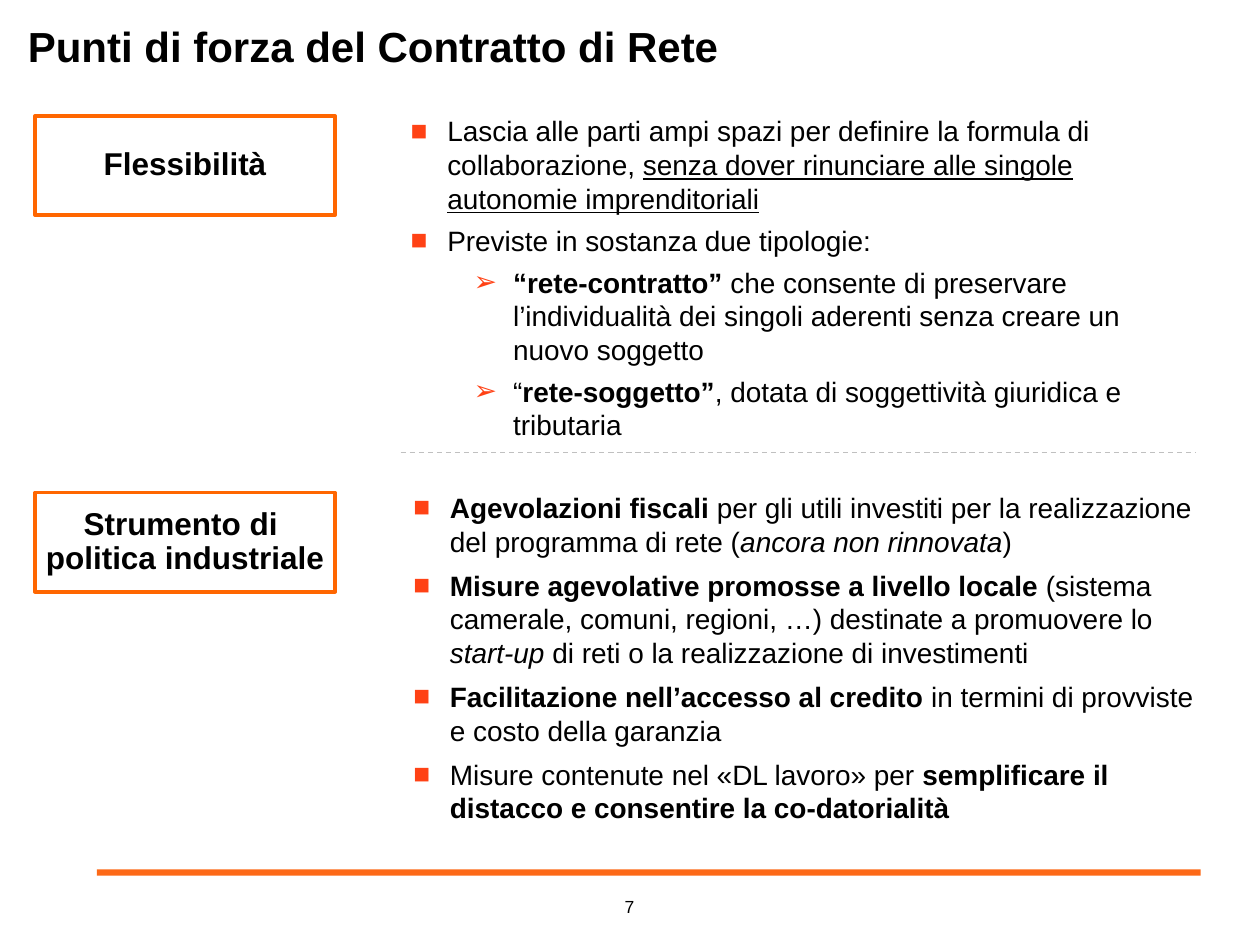
from lxml import etree
from pptx import Presentation
from pptx import util as u
from pptx.dml.color import RGBColor
from pptx.enum import dml, shapes, text
from pptx.oxml import ns

Pt = u.Pt
FONT = "Arial"
COLORS = {
    "text": "000000", "box": "FFFFFF", "frame": "FF6600",
    "bullet": "FF4215", "divider": "C0C0C0", "footer": "FD6917",
}
TITLE = "Punti di forza del Contratto di Rete"
PAGE = "7"

# Each point is (level, runs); each run is (wording, style)
FLEXIBILITY = [
    (0, [("Lascia alle parti ampi spazi per definire la formula di collaborazione, ", ""),
         ("senza dover rinunciare alle singole autonomie imprenditoriali", "underline")]),
    (0, [("Previste in sostanza due tipologie:", "")]),
    (1, [("“rete-contratto”", "bold"),
         (" che consente di preservare l’individualità dei singoli aderenti "
          "senza creare un nuovo soggetto", "")]),
    (1, [("“", ""), ("rete-soggetto”", "bold"),
         (", dotata di soggettività giuridica e tributaria", "")]),
]
POLICY = [
    (0, [("Agevolazioni fiscali", "bold"),
         (" per gli utili investiti per la realizzazione del programma di rete (", ""),
         ("ancora non rinnovata", "italic"), (")", "")]),
    (0, [("Misure agevolative promosse a livello locale", "bold"),
         (" (sistema camerale, comuni, regioni, …) destinate a promuovere lo ", ""),
         ("start-up", "italic"),
         (" di reti o la realizzazione di investimenti", "")]),
    (0, [("Facilitazione nell’accesso al credito", "bold"),
         (" in termini di provviste e costo della garanzia", "")]),
    (0, [("Misure contenute nel «DL lavoro» per ", ""),
         ("semplificare il distacco e consentire la co-datorialità", "bold")]),
]
# Heading lines, heading top, points, (left, top, width, height), gap, anchor
SECTIONS = [
    (["Flessibilità"], 66.25, FLEXIBILITY, (227.5, 62.6, 455.8, 192.2), 4.8,
     text.MSO_ANCHOR.MIDDLE),
    (["Strumento di ", "politica industriale"], 281.5, POLICY,
     (229, 280.3, 454.3, 212), 6, text.MSO_ANCHOR.TOP),
]
# Bullet, left margin and hanging indent of each level
LEVELS = [("■", 20.9, 20.9), ("➢", 58.5, 22.5)]


def rgb(part):
    return RGBColor.from_string(COLORS[part])


def place(shape, left, top, width, height):
    shape.left, shape.top = Pt(left), Pt(top)
    shape.width, shape.height = Pt(width), Pt(height)


def set_frame(frame, anchor, left=0, right=0, wrap=True):
    frame.auto_size = text.MSO_AUTO_SIZE.NONE
    frame.word_wrap = wrap
    frame.vertical_anchor = anchor
    frame.margin_left, frame.margin_right = Pt(left), Pt(right)
    frame.margin_top = frame.margin_bottom = 0


def set_font(paragraph, size, bold=False):
    font = paragraph.font
    font.name, font.size, font.bold = FONT, Pt(size), bold
    font.color.rgb = rgb("text")


def add_bullet(paragraph, level):
    char, margin, hanging = LEVELS[level]
    props = paragraph._p.get_or_add_pPr()
    props.set("marL", str(Pt(margin)))
    props.set("indent", str(-Pt(hanging)))
    color = etree.SubElement(props, ns.qn("a:buClr"))
    etree.SubElement(color, ns.qn("a:srgbClr"), val=COLORS["bullet"])
    etree.SubElement(props, ns.qn("a:buFont"), typeface=FONT)
    etree.SubElement(props, ns.qn("a:buChar"), char=char)


def fill_points(body, points, gap):
    for index, (level, runs) in enumerate(points):
        paragraph = body.paragraphs[0] if index == 0 else body.add_paragraph()
        paragraph.level = level
        add_bullet(paragraph, level)
        set_font(paragraph, 16)
        paragraph.space_before = Pt(gap if index else 0)
        for wording, style in runs:
            run = paragraph.add_run()
            run.text = wording
            if style:
                setattr(run.font, style, True)


def add_rectangle(slide, left, top, width, height, fill):
    rectangle = slide.shapes.add_shape(
        shapes.MSO_SHAPE.RECTANGLE, Pt(left), Pt(top), Pt(width), Pt(height))
    rectangle.shadow.inherit = False
    rectangle.fill.solid()
    rectangle.fill.fore_color.rgb = rgb(fill)
    rectangle.line.fill.background()
    return rectangle


def add_heading(slide, lines, top):
    heading = add_rectangle(slide, 20, top, 171.5, 56.75, "box")
    heading.line.color.rgb = rgb("frame")
    heading.line.width = Pt(2)
    frame = heading.text_frame
    set_frame(frame, text.MSO_ANCHOR.MIDDLE, 7.2, 7.2, wrap=False)
    frame.text = "\n".join(lines)
    for paragraph in frame.paragraphs:
        paragraph.alignment = text.PP_ALIGN.CENTER
        paragraph.line_spacing = 0.9
        set_font(paragraph, 18, bold=True)


def add_divider(slide, left, right, y):
    divider = slide.shapes.add_connector(
        shapes.MSO_CONNECTOR.STRAIGHT, Pt(left), Pt(y), Pt(right), Pt(y))
    divider.line.color.rgb = rgb("divider")
    divider.line.width = Pt(0.75)
    divider.line.dash_style = dml.MSO_LINE.DASH
    etree.SubElement(divider._element.spPr, ns.qn("a:effectLst"))


def main():
    deck = Presentation()
    deck.slide_width, deck.slide_height = Pt(720), Pt(540)
    slide = deck.slides.add_slide(deck.slide_layouts.get_by_name("Two Content"))
    title, *bodies = list(slide.placeholders)[:3]

    add_rectangle(slide, 55.4, 496.8, 630.7, 3.6, "footer")
    page = slide.shapes.add_textbox(Pt(349.2), Pt(512), Pt(20.9), Pt(12.2)).text_frame
    set_frame(page, text.MSO_ANCHOR.TOP)
    page.text = PAGE
    page.paragraphs[0].alignment = text.PP_ALIGN.CENTER
    set_font(page.paragraphs[0], 10)

    place(title, 13, 11.5, 692.6, 28.8)
    set_frame(title.text_frame, text.MSO_ANCHOR.TOP, 2.9, 2.9)
    title.text_frame.text = TITLE
    title.text_frame.paragraphs[0].alignment = text.PP_ALIGN.LEFT
    set_font(title.text_frame.paragraphs[0], 24, bold=True)

    for body, (lines, top, points, area, gap, anchor) in zip(bodies, SECTIONS):
        place(body, *area)
        set_frame(body.text_frame, anchor, left=7.2)
        fill_points(body.text_frame, points, gap)
        add_heading(slide, lines, top)
    add_divider(slide, 229, 683.3, 258.5)
    deck.save("out.pptx")


if __name__ == "__main__":
    main()
